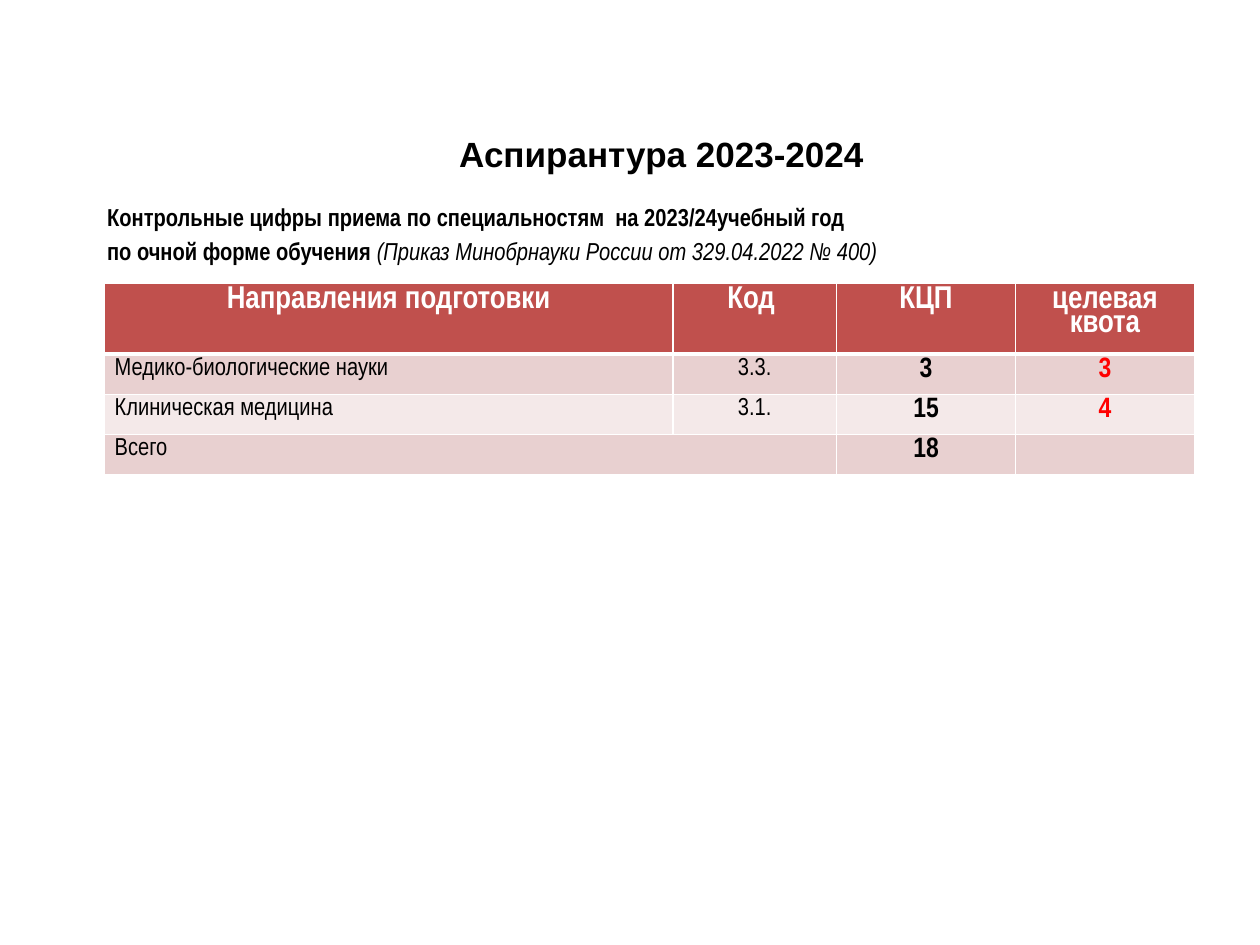
from dataclasses import dataclass

from lxml import etree
from pptx import Presentation
from pptx.dml.color import RGBColor
from pptx.enum.text import MSO_ANCHOR, MSO_AUTO_SIZE, PP_ALIGN
from pptx.oxml.ns import qn
from pptx.util import Inches, Pt

CENTER = PP_ALIGN.CENTER
LEFT = PP_ALIGN.LEFT
MIDDLE = MSO_ANCHOR.MIDDLE
NO_AUTOFIT = MSO_AUTO_SIZE.NONE

COLORS = {
    "black": "000000",
    "white": "FFFFFF",
    "red": "FF0000",
    "header": "C0504D",
    "dark band": "E8D0D0",
    "light band": "F4E9E9",
}


@dataclass(frozen=True)
class TextStyle:
    size: int
    color: str = "black"
    bold: bool = False
    align: PP_ALIGN = CENTER
    font: str = "Arial Narrow"


TITLE = TextStyle(20, bold=True, font="Arial")
BODY = TextStyle(14, bold=True, align=LEFT)
HEADER = TextStyle(18, "white", bold=True)
NAME = TextStyle(14, align=LEFT)
CODE = TextStyle(14)
QUOTA = TextStyle(16, bold=True)
TARGET = TextStyle(16, "red", bold=True)
ROW_STYLES = (NAME, CODE, QUOTA, TARGET)

COLUMN_WIDTHS = (4.51, 1.3, 1.42, 1.42)
HEADER_HEIGHT = 0.56
ROW_HEIGHT = 0.32
ROWS = (
    ("Направления подготовки", "Код ", "КЦП", "целевая квота"),
    ("Медико-биологические науки", "3.3.", "3", "3"),
    ("Клиническая медицина", "3.1.", "15", "4"),
    ("Всего", "", "18", ""),
)


def place(shape, left: float, top: float, width: float, height: float) -> None:
    shape.left, shape.top = Inches(left), Inches(top)
    shape.width, shape.height = Inches(width), Inches(height)


def style_paragraph(paragraph, style: TextStyle) -> None:
    paragraph.alignment = style.align
    paragraph.font.name = style.font
    paragraph.font.size = Pt(style.size)
    paragraph.font.bold = style.bold
    paragraph.font.color.rgb = RGBColor.from_string(COLORS[style.color])


def remove_bullet(paragraph) -> None:
    properties = paragraph._p.get_or_add_pPr()
    properties.set("marL", "0")
    properties.set("indent", "0")
    etree.SubElement(properties, qn("a:buNone"))


def set_borders(cell, bottom: float, top: float) -> None:
    properties = cell._tc.get_or_add_tcPr()
    widths = {"a:lnL": 1, "a:lnR": 1, "a:lnT": top, "a:lnB": bottom}
    for position, (tag, width) in enumerate(widths.items()):
        line = etree.Element(qn(tag), w=str(Pt(width)))
        fill = etree.SubElement(line, qn("a:solidFill"))
        etree.SubElement(fill, qn("a:srgbClr"), val=COLORS["white"])
        properties.insert(position, line)


def fill_cell(cell, text: str, style: TextStyle, fill: str) -> None:
    cell.fill.solid()
    cell.fill.fore_color.rgb = RGBColor.from_string(COLORS[fill])
    cell.margin_left = cell.margin_right = Inches(0.08)
    cell.text = text
    paragraph = cell.text_frame.paragraphs[0]
    paragraph.line_spacing = 0.8
    style_paragraph(paragraph, style)


def add_title(slide) -> None:
    title = slide.shapes.title
    place(title, 0.75, 0.99, 9, 0.46)
    title.text_frame.text = "Аспирантура 2023-2024"
    title.text_frame.auto_size = NO_AUTOFIT
    title.text_frame.vertical_anchor = MIDDLE
    style_paragraph(title.text_frame.paragraphs[0], TITLE)


def add_body(slide) -> None:
    body = slide.placeholders[1]
    place(body, 0.75, 1.55, 9.29, 6.74)
    frame = body.text_frame
    frame.auto_size = NO_AUTOFIT
    first = frame.paragraphs[0]
    first.add_run().text = "Контрольные цифры приема по специальностям  на 2023/24учебный год"
    second = frame.add_paragraph()
    second.add_run().text = "по очной форме обучения "
    order = second.add_run()
    order.text = "(Приказ Минобрнауки России от 329.04.2022 № 400)"
    for paragraph, space in ((first, 0), (second, 2.8)):
        remove_bullet(paragraph)
        paragraph.space_before = Pt(space)
        style_paragraph(paragraph, BODY)
    order.font.bold = False
    order.font.italic = True


def add_quota_table(slide) -> None:
    height = HEADER_HEIGHT + ROW_HEIGHT * (len(ROWS) - 1)
    table = slide.shapes.add_table(
        len(ROWS), len(COLUMN_WIDTHS), Inches(0.83), Inches(2.25),
        Inches(sum(COLUMN_WIDTHS)), Inches(height),
    ).table
    for column, width in zip(table.columns, COLUMN_WIDTHS):
        column.width = Inches(width)
    for row_index, texts in enumerate(ROWS):
        is_header = row_index == 0
        table.rows[row_index].height = Inches(HEADER_HEIGHT if is_header else ROW_HEIGHT)
        band = "dark band" if row_index % 2 else "light band"
        for column_index, text in enumerate(texts):
            cell = table.cell(row_index, column_index)
            style = HEADER if is_header else ROW_STYLES[column_index]
            fill_cell(cell, text, style, "header" if is_header else band)
            set_borders(cell, bottom=3 if is_header else 1, top=3 if row_index == 1 else 1)
    last = len(ROWS) - 1
    table.cell(last, 0).merge(table.cell(last, 1))


def main() -> None:
    presentation = Presentation()
    presentation.slide_width = Inches(10)
    presentation.slide_height = Inches(7.5)
    slide = presentation.slides.add_slide(presentation.slide_layouts[1])
    add_title(slide)
    add_body(slide)
    add_quota_table(slide)
    presentation.save("out.pptx")


if __name__ == "__main__":
    main()
